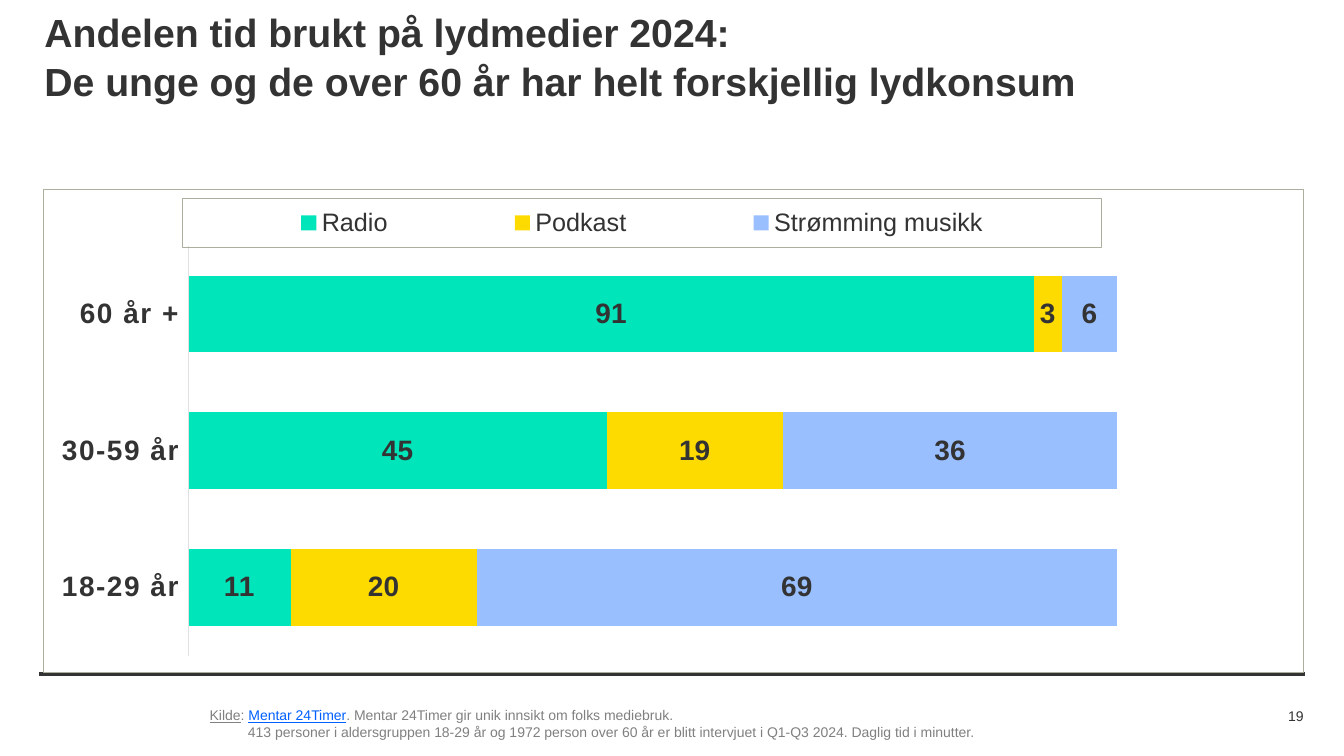
from lxml.etree import SubElement
from pptx import Presentation
from pptx.chart.data import CategoryChartData
from pptx.dml.color import RGBColor
from pptx.enum.chart import XL_CHART_TYPE, XL_LABEL_POSITION, XL_LEGEND_POSITION, XL_TICK_LABEL_POSITION, XL_TICK_MARK
from pptx.enum.shapes import MSO_CONNECTOR
from pptx.enum.text import MSO_ANCHOR, MSO_AUTO_SIZE, PP_ALIGN
from pptx.oxml import parse_xml
from pptx.oxml.ns import nsdecls, qn
from pptx.util import Inches, Pt

COLORS = {
    "ink": "333333",
    "muted": "808080",
    "link": "0060FF",
    "border": "AEAE9F",
    "axis": "E0E0E0",
    "Radio": "00E5BA",
    "Podkast": "FEDB00",
    "Strømming musikk": "99BFFF",
}
AGE_GROUPS = ["18-29 år", "30-59 år", "60 år +"]
SHARES = {
    "Radio": [11, 45, 91],
    "Podkast": [20, 19, 3],
    "Strømming musikk": [69, 36, 6],
}
TITLE = ("Andelen tid brukt på lydmedier 2024:\v"
         "De unge og de over 60 år har helt forskjellig lydkonsum")
SOURCE = [
    [("Kilde", "muted", True), (": ", "muted", False), ("Mentar 24Timer", "link", True),
     (". Mentar 24Timer gir unik innsikt om folks mediebruk.", "muted", False)],
    [("413 personer i aldersgruppen 18-29 år og 1972 person over 60 år er blitt "
      "intervjuet i Q1-Q3 2024. Daglig tid i minutter.", "muted", False)],
]


def rgb(key):
    return RGBColor.from_string(COLORS[key])


def apply(target, values):
    for attribute, value in values.items():
        setattr(target, attribute, value)


def style_font(font, size, color="ink", **extra):
    apply(font, {"name": "Arial", "size": Pt(size), **extra})
    font.color.rgb = rgb(color)


def place(element, left, top, width, height):
    apply(element, {"left": Inches(left), "top": Inches(top),
                    "width": Inches(width), "height": Inches(height)})


def add_title(slide):
    title = slide.shapes.title
    place(title, 0.34, 0, 12.94, 0.99)
    frame = title.text_frame
    apply(frame, {"text": TITLE, "word_wrap": True, "auto_size": MSO_AUTO_SIZE.NONE,
                  "vertical_anchor": MSO_ANCHOR.TOP, "margin_top": Inches(0.06)})
    heading = frame.paragraphs[0]
    apply(heading, {"alignment": PP_ALIGN.LEFT, "line_spacing": 1.05})
    for run in heading.runs:
        style_font(run.font, 28, bold=True)


def add_rule(slide):
    rule = slide.shapes.add_connector(
        MSO_CONNECTOR.STRAIGHT, Inches(0.39), Inches(6.69), Inches(12.94), Inches(6.69))
    rule.line.color.rgb = rgb("ink")
    rule.line.width = Pt(3)
    SubElement(rule._element.spPr, qn("a:effectLst"))


def add_note(slide, box, lines, alignment):
    note = slide.shapes.add_textbox(*map(Inches, box))
    frame = note.text_frame
    apply(frame, {"word_wrap": True, "vertical_anchor": MSO_ANCHOR.MIDDLE,
                  "margin_left": 0, "margin_right": 0, "margin_top": 0, "margin_bottom": 0})
    for index, pieces in enumerate(lines):
        paragraph = frame.add_paragraph() if index else frame.paragraphs[0]
        paragraph.alignment = alignment
        if index:
            paragraph._p.get_or_add_pPr().set("marL", str(Inches(0.38)))
        for text, color, underline in pieces:
            run = paragraph.add_run()
            run.text = text
            style_font(run.font, 10, color, underline=underline)


def border_xml():
    return parse_xml(
        f'<c:spPr {nsdecls("c", "a")}><a:noFill/><a:ln w="{Pt(0.75)}"><a:solidFill>'
        f'<a:srgbClr val="{COLORS["border"]}"/></a:solidFill></a:ln></c:spPr>')


def layout_xml(left, top, width, height, inner=False):
    target = '<c:layoutTarget val="inner"/>' if inner else ""
    return parse_xml(
        f'<c:layout {nsdecls("c")}><c:manualLayout>{target}'
        '<c:xMode val="edge"/><c:yMode val="edge"/>'
        f'<c:x val="{left}"/><c:y val="{top}"/><c:w val="{width}"/><c:h val="{height}"/>'
        '</c:manualLayout></c:layout>')


def set_layout(parent, layout, position):
    for old in parent.findall(qn("c:layout")):
        parent.remove(old)
    parent.insert(position, layout)


def style_axes(chart):
    ages = chart.category_axis
    apply(ages, {"major_tick_mark": XL_TICK_MARK.NONE, "minor_tick_mark": XL_TICK_MARK.NONE,
                 "tick_label_position": XL_TICK_LABEL_POSITION.LOW})
    style_font(ages.tick_labels.font, 20, bold=True)
    ages.tick_labels.font._element.set("spc", "100")
    ages.format.line.color.rgb = rgb("axis")
    ages.format.line.width = Pt(0.75)
    apply(chart.value_axis, {"visible": False, "has_major_gridlines": False,
                             "minimum_scale": 0, "maximum_scale": 120})


def style_legend(chart):
    chart.has_legend = True
    legend = chart.legend
    apply(legend, {"position": XL_LEGEND_POSITION.TOP, "include_in_layout": False})
    style_font(legend.font, 18)
    element = legend._element
    set_layout(element, layout_xml(0.11, 0.02, 0.73, 0.1), 1)
    element.find(qn("c:overlay")).addnext(border_xml())


def add_share_chart(slide):
    data = CategoryChartData()
    data.categories = AGE_GROUPS
    for medium, shares in SHARES.items():
        data.add_series(medium, shares)
    chart = slide.shapes.add_chart(
        XL_CHART_TYPE.BAR_STACKED, Inches(0.43), Inches(1.87),
        Inches(12.5), Inches(4.81), data).chart
    chart.has_title = False
    style_font(chart.font, 10)
    style_axes(chart)
    style_legend(chart)
    plot = chart.plots[0]
    apply(plot, {"gap_width": 79, "overlap": 100, "vary_by_categories": False})
    for series in plot.series:
        series.format.fill.solid()
        series.format.fill.fore_color.rgb = rgb(series.name)
        labels = series.data_labels
        apply(labels, {"show_value": True, "position": XL_LABEL_POSITION.CENTER})
        style_font(labels.font, 20, bold=True)
    body = chart.element.find(qn("c:chart"))
    set_layout(body.find(qn("c:plotArea")), layout_xml(0.115, 0.117, 0.885, 0.848, True), 0)
    body.addnext(border_xml())


def main():
    deck = Presentation()
    apply(deck, {"slide_width": Inches(13.33), "slide_height": Inches(7.5)})
    slide = deck.slides.add_slide(deck.slide_layouts[5])
    add_title(slide)
    add_rule(slide)
    add_share_chart(slide)
    add_note(slide, (2.08, 7.05, 9.46, 0.25), SOURCE, PP_ALIGN.LEFT)
    add_note(slide, (11.87, 6.99, 1.06, 0.22), [[("19", "ink", False)]], PP_ALIGN.RIGHT)
    deck.save("out.pptx")


if __name__ == "__main__":
    main()
